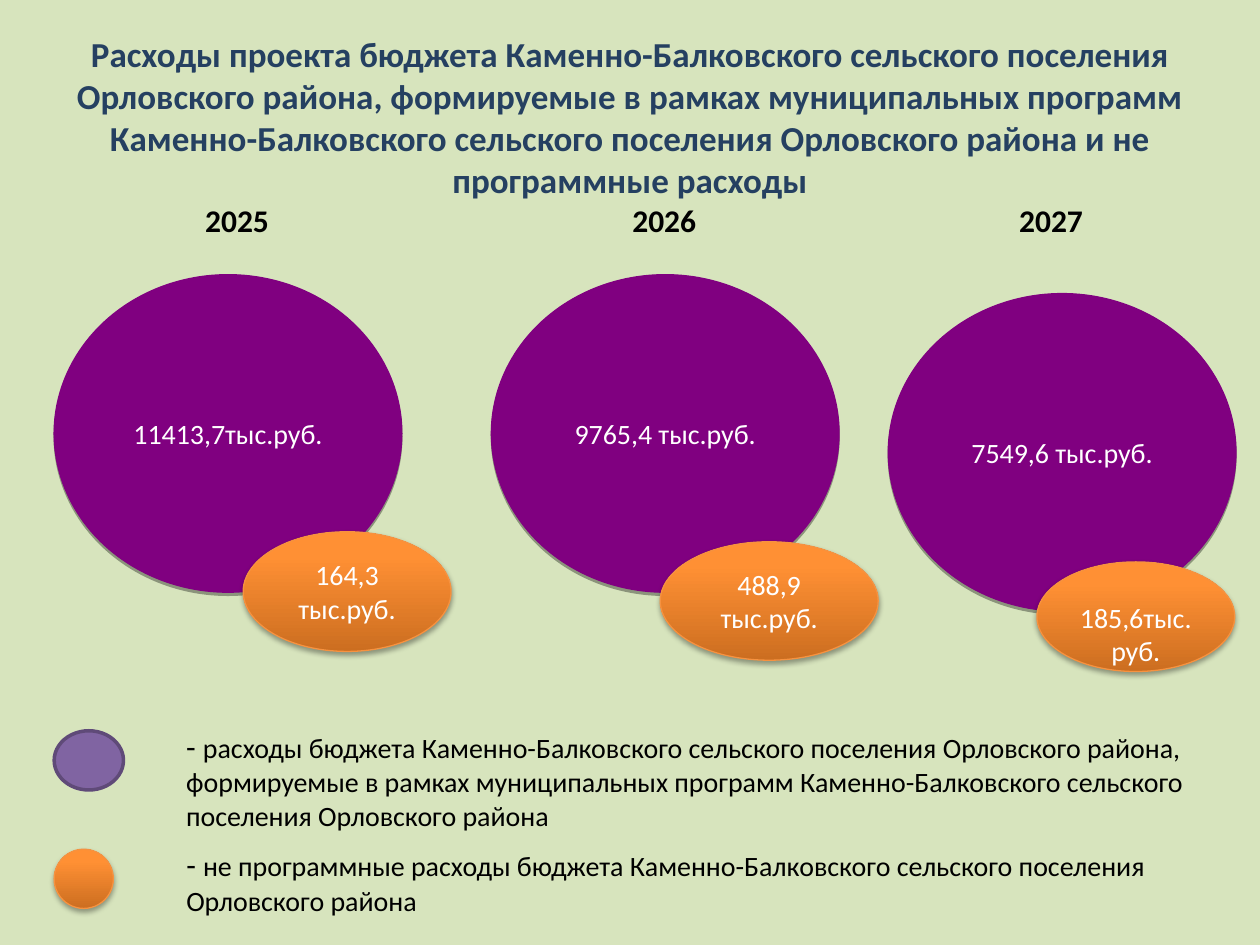
"""Build the slide on programme and non-programme budget spending."""
from lxml.etree import SubElement
from pptx import Presentation
from pptx.dml.color import RGBColor
from pptx.enum.shapes import MSO_SHAPE
from pptx.enum.text import MSO_ANCHOR, PP_ALIGN
from pptx.oxml.ns import qn
from pptx.util import Inches, Pt

GREEN = RGBColor(0xD7, 0xE4, 0xBD)
NAVY = RGBColor(0x25, 0x40, 0x61)
BLACK = RGBColor(0, 0, 0)
WHITE = RGBColor(255, 255, 255)
PURPLE = RGBColor(0x80, 0, 0x80)
LILAC = RGBColor(0x80, 0x64, 0xA2)
PLUM = RGBColor(0x5F, 0x4A, 0x78)
RUST = RGBColor(0xCC, 0x6E, 0x20)
ORANGE = RGBColor(0xFF, 0x90, 0x34)
AMBER = RGBColor(0xF6, 0x92, 0x40)

TITLE = ("Расходы проекта бюджета Каменно-Балковского сельского поселения "
         "Орловского района, формируемые в рамках муниципальных программ "
         "Каменно-Балковского сельского поселения Орловского района и не "
         "программные расходы")
YEARS = [
    dict(year="2025", head=1.53, disc=(0.43, 2.18), main="11413,7тыс.руб.",
         rest=["164,3", "тыс.руб."], oval=(1.93, 4.22, 1.65, 0.95), drop=0),
    dict(year="2026", head=4.92, disc=(3.9, 2.18), main="9765,4 тыс.руб.",
         rest=["488,9 тыс.руб."], oval=(5.24, 4.3, 1.73, 0.94), drop=0),
    dict(year="2027", head=7.99, disc=(7.05, 2.33), main="7549,6 тыс.руб.",
         rest=["185,6тыс.руб."], oval=(8.23, 4.46, 1.57, 0.87), drop=0.27),
]
DISC = (2.76, 2.52)
LEGEND = [
    ("расходы бюджета Каменно-Балковского сельского поселения Орловского "
     "района, формируемые в рамках муниципальных программ "
     "Каменно-Балковского сельского поселения Орловского района",
     (1.38, 5.72, 8.43, 0.94)),
    ("не программные расходы бюджета Каменно-Балковского сельского "
     "поселения Орловского района", (1.38, 6.66, 8.51, 0.67)),
]

deck = Presentation()
deck.slide_width, deck.slide_height = Inches(10), Inches(7.5)
slide = deck.slides.add_slide(deck.slide_layouts[6])
slide.background.fill.solid()
slide.background.fill.fore_color.rgb = GREEN


def write(frame, lines, color, bold=False, align=PP_ALIGN.LEFT):
    """Fill a frame with lines, each a list of (text, size) runs."""
    frame.word_wrap = True
    for i, runs in enumerate(lines):
        para = frame.add_paragraph() if i else frame.paragraphs[0]
        para.alignment = align
        for text, size in runs:
            run = para.add_run()
            run.text = text
            font = run.font
            font.name, font.size, font.bold = "Calibri", Pt(size), bold
            font.color.rgb = color


def label(box, runs, color=BLACK, **look):
    """Add a text box and return its frame."""
    frame = slide.shapes.add_textbox(*map(Inches, box)).text_frame
    write(frame, [runs], color, **look)
    return frame


def shade(shape, blur):
    """Give a shape a soft shadow below it."""
    effects = shape._element.spPr.find(qn("a:effectLst"))
    outer = SubElement(effects, qn("a:outerShdw"), blurRad=str(Pt(blur)),
                       dist=str(Pt(1.8)), dir="5400000", rotWithShape="0")
    tint = SubElement(outer, qn("a:srgbClr"), val="000000")
    SubElement(tint, qn("a:alpha"), val="35000")


def ellipse(box, fill, edge, width=0.75, lines=(), drop=0):
    """Add an ellipse with centred white text."""
    shape = slide.shapes.add_shape(MSO_SHAPE.OVAL, *map(Inches, box))
    shape.shadow.inherit = False
    shape.fill.solid()
    shape.fill.fore_color.rgb = fill
    shape.line.color.rgb = edge
    shape.line.width = Pt(width)
    frame = shape.text_frame
    frame.vertical_anchor = MSO_ANCHOR.MIDDLE
    frame.margin_top = Inches(0.05 + drop)
    write(frame, [[(line, 16)] for line in lines], WHITE,
          align=PP_ALIGN.CENTER)
    return shape


def glow(box, lines=(), drop=0):
    """Add an orange ellipse that darkens towards its foot."""
    shape = ellipse(box, ORANGE, AMBER, lines=lines, drop=drop)
    shape.fill.gradient()
    shape.fill.gradient_angle = 90
    stops = shape.fill.gradient_stops
    for stop, color, place in zip(stops, (RUST, ORANGE), (0, 0.8)):
        stop.color.rgb, stop.position = color, place
    shade(shape, 3.1)


title = label((0.5, 0.3, 9, 1.25), [(TITLE, 20)], NAVY, bold=True,
              align=PP_ALIGN.CENTER)
title.vertical_anchor = MSO_ANCHOR.MIDDLE

for item in YEARS:
    label((item["head"], 1.55, 0.79, 0.4), [(item["year"], 18)], bold=True)
    shade(ellipse(item["disc"] + DISC, PURPLE, PURPLE,
                  lines=[item["main"]]), 0)
    glow(item["oval"], item["rest"], item["drop"])

ellipse((0.43, 5.8, 0.55, 0.47), LILAC, PLUM, 2)
glow((0.43, 6.74, 0.47, 0.47))
for text, box in LEGEND:
    label(box, [("- ", 18), (text, 16)])

deck.save("out.pptx")
